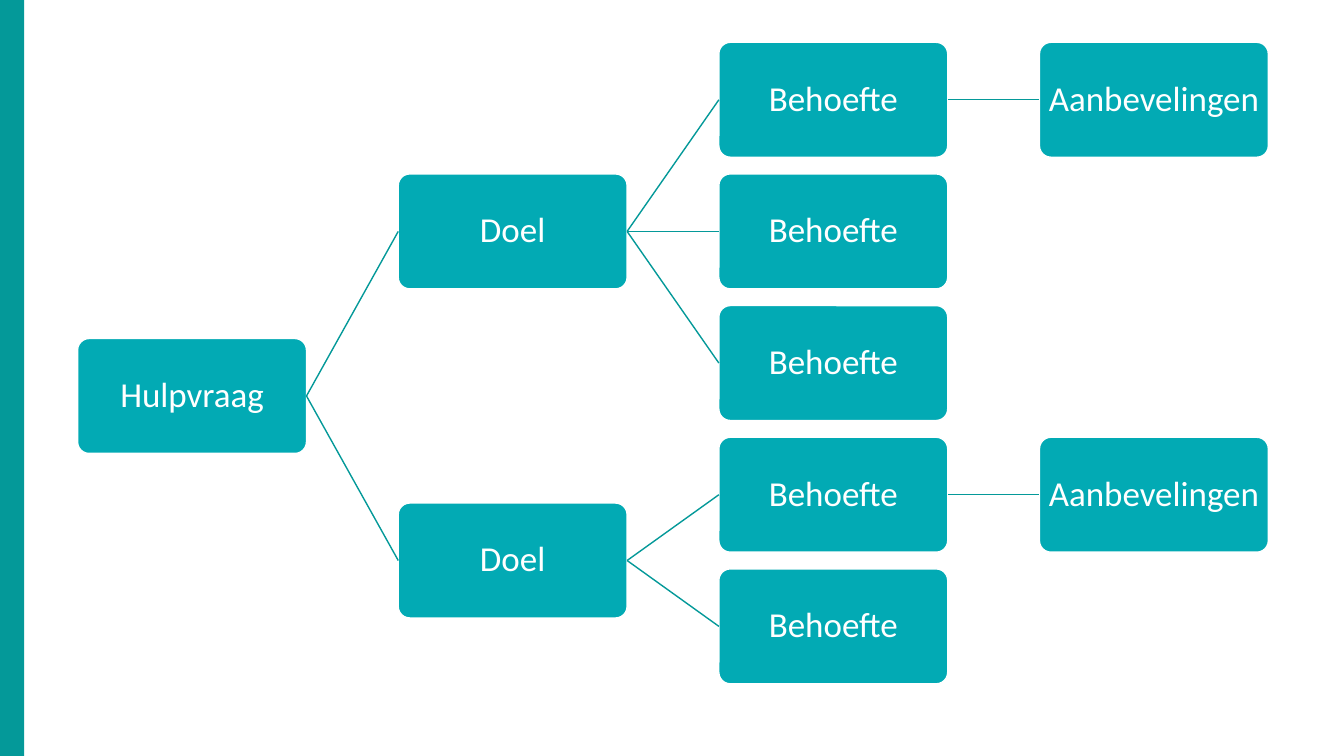
import pptx
import pptx.dml.color
import pptx.enum.shapes
import pptx.enum.text
import pptx.oxml
import pptx.oxml.ns
import pptx.util

COLORS = {"side_bar": "049999", "box": "02AAB4", "branch": "049999", "white": "FFFFFF"}

GOAL_TREE = ("Hulpvraag", [
    ("Doel", [
        ("Behoefte", [("Aanbevelingen", [])]),
        ("Behoefte", []),
        ("Behoefte", []),
    ]),
    ("Doel", [
        ("Behoefte", [("Aanbevelingen", [])]),
        ("Behoefte", []),
    ]),
])


class TreeSlide:
    font_name = "Calibri"
    font_size = 25
    line_width = 1
    left, column_step = 0.77, 3.18
    first_center, row_step = 0.99, 1.306
    box_width, box_height = 2.27, 1.14
    inset = 0.02

    def __init__(self, presentation):
        self.height = presentation.slide_height
        self.slide = presentation.slides.add_slide(presentation.slide_layouts[6])
        self.next_row = 0

    def color(self, name):
        return pptx.dml.color.RGBColor.from_string(COLORS[name])

    def shape(self, kind, left, top, width, height, fill):
        shape = self.slide.shapes.add_shape(kind, left, top, width, height)
        shape.shadow.inherit = False
        shape.fill.solid()
        shape.fill.fore_color.rgb = self.color(fill)
        return shape

    def side_bar(self, width):
        kind = pptx.enum.shapes.MSO_SHAPE.RECTANGLE
        bar = self.shape(kind, 0, 0, pptx.util.Inches(width), self.height, "side_bar")
        bar.line.fill.background()

    def box(self, text, column, row):
        inches = pptx.util.Inches
        box = self.shape(
            pptx.enum.shapes.MSO_SHAPE.ROUNDED_RECTANGLE,
            inches(self.left + column * self.column_step),
            inches(self.first_center + row * self.row_step - self.box_height / 2),
            inches(self.box_width), inches(self.box_height), "box")
        box.adjustments[0] = 0.1
        box.line.color.rgb = self.color("white")
        box.line.width = pptx.util.Pt(self.line_width)
        frame = box.text_frame
        frame.margin_left = frame.margin_right = inches(self.inset)
        frame.margin_top = frame.margin_bottom = inches(self.inset)
        frame.vertical_anchor = pptx.enum.text.MSO_ANCHOR.MIDDLE
        frame.word_wrap = True
        frame.text = text
        paragraph = frame.paragraphs[0]
        paragraph.alignment = pptx.enum.text.PP_ALIGN.CENTER
        paragraph.line_spacing = 0.9
        font = paragraph.runs[0].font
        font.name = self.font_name
        font.size = pptx.util.Pt(self.font_size)
        font.color.rgb = self.color("white")
        return box

    def branch(self, parent, child):
        right_side, left_side = 3, 1
        straight = pptx.enum.shapes.MSO_CONNECTOR.STRAIGHT
        connector = self.slide.shapes.add_connector(straight, 0, 0, 0, 0)
        connector.begin_connect(parent, right_side)
        connector.end_connect(child, left_side)
        connector.line.color.rgb = self.color("branch")
        connector.line.width = pptx.util.Pt(self.line_width)
        properties = connector._element.spPr
        properties.append(pptx.oxml.parse_xml(
            "<a:effectLst %s/>" % pptx.oxml.ns.nsdecls("a")))

    def tree(self, node, column=0):
        text, children = node
        placed = [self.tree(child, column + 1) for child in children]
        if placed:
            row = (placed[0][1] + placed[-1][1]) / 2
        else:
            row = self.next_row
            self.next_row += 1
        box = self.box(text, column, row)
        for child, _ in placed:
            self.branch(box, child)
        return box, row


def main():
    presentation = pptx.Presentation()
    presentation.slide_width = pptx.util.Inches(13.33)
    presentation.slide_height = pptx.util.Inches(7.5)
    slide = TreeSlide(presentation)
    slide.side_bar(0.24)
    slide.tree(GOAL_TREE)
    presentation.save("out.pptx")


if __name__ == "__main__":
    main()
